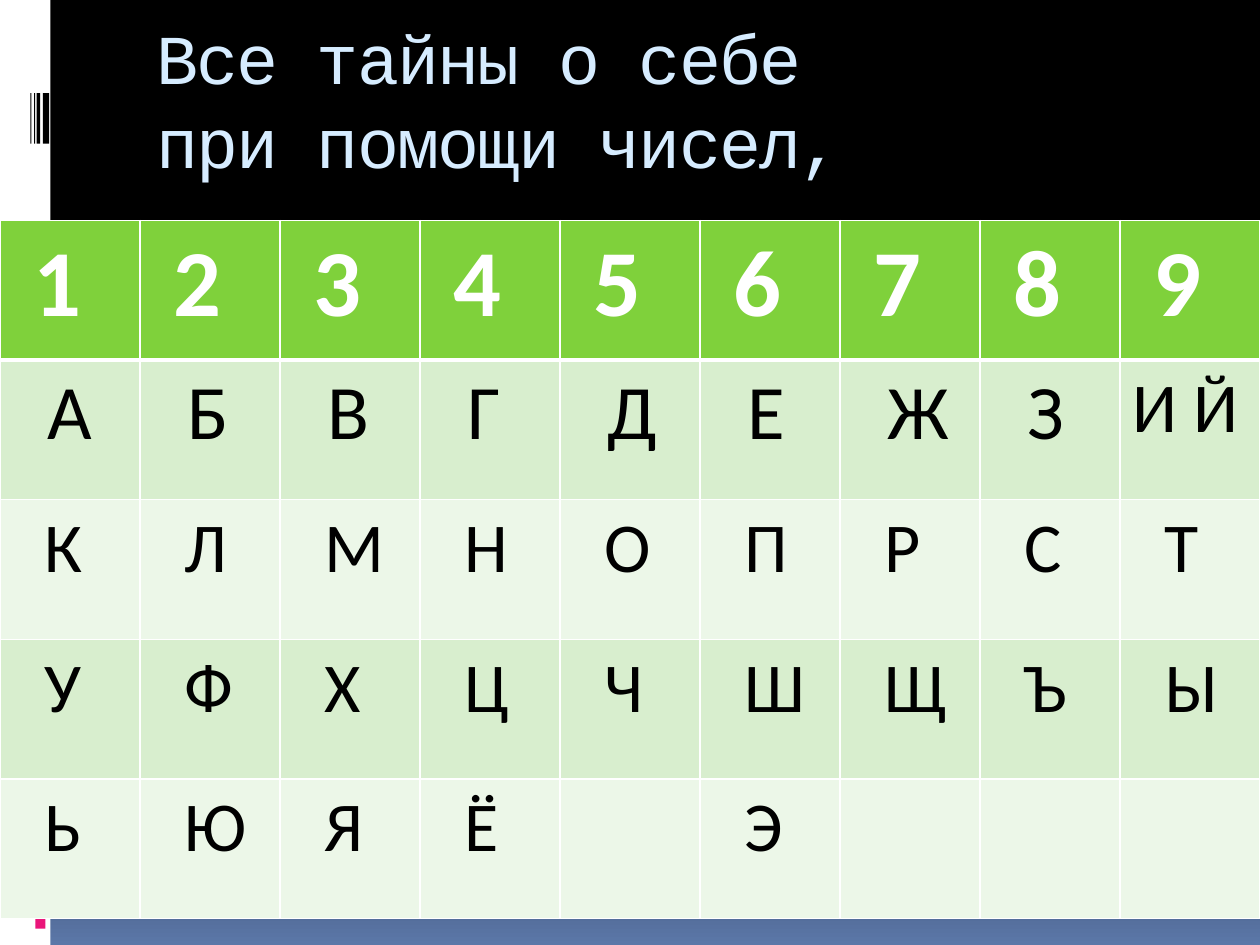
from lxml import etree
from pptx import Presentation
from pptx.dml.color import RGBColor
from pptx.enum.shapes import MSO_SHAPE as Preset
from pptx.enum.text import MSO_ANCHOR as Anchor
from pptx.oxml.ns import qn
from pptx.util import Inches, Pt


def colour(code):
    return RGBColor.from_string(code)


class SlideBuilder:
    title_font, table_font = "Courier New", "Calibri"
    black, white, title_blue, base_blue = "000000", "FFFFFF", "D6ECFF", "5B77A8"
    header_fill, band_fills = "7FD13B", ("D8EECE", "ECF7E8")

    def __init__(self, page):
        self.page = page

    def background(self):
        fill = self.page.background.fill
        fill.gradient()
        fill.gradient_angle = 270
        stops = ((0.65, self.black), (1, self.base_blue))
        for stop, (position, code) in zip(fill.gradient_stops, stops):
            stop.position = position
            stop.color.rgb = colour(code)

    def bar(self, left, top, width, height, code):
        shape = self.page.shapes.add_shape(
            Preset.RECTANGLE, Inches(left), Inches(top), Inches(width), Inches(height))
        shape.shadow.inherit = False
        shape.fill.solid()
        shape.fill.fore_color.rgb = colour(code)
        shape.line.fill.background()

    def title(self, text, left, top, width, height):
        box = self.page.shapes.add_textbox(
            Inches(left), Inches(top), Inches(width), Inches(height))
        frame = box.text_frame
        frame.word_wrap = True
        frame.vertical_anchor = Anchor.MIDDLE
        para = frame.paragraphs[0]
        para.text = text
        para.line_spacing = Pt(48)
        self.style(para, self.title_font, 40, self.title_blue)
        for span in para.runs:
            span.font._element.set("spc", "-100")

    def style(self, para, name, size, code, bold=False):
        font = para.font
        font.name, font.size, font.bold = name, Pt(size), bold
        font.color.rgb = colour(code)

    def borders(self, cell, bottom):
        properties = cell._tc.get_or_add_tcPr()
        widths = {"a:lnL": 1, "a:lnR": 1, "a:lnT": 1, "a:lnB": bottom}
        for index, (tag, width) in enumerate(widths.items()):
            line = etree.Element(qn(tag), w=str(Pt(width)))
            solid = etree.SubElement(line, qn("a:solidFill"))
            etree.SubElement(solid, qn("a:srgbClr"), val=self.white)
            properties.insert(index, line)

    def cell(self, cell, text, size, indent, header, fill):
        cell.fill.solid()
        cell.fill.fore_color.rgb = colour(fill)
        cell.margin_left = Inches(indent)
        para = cell.text_frame.paragraphs[0]
        para.text = text
        self.style(para, self.table_font, size,
                   self.white if header else self.black, bold=header)
        self.borders(cell, 3 if header else 1)

    def table(self, rows, left, top, width, height):
        table = self.page.shapes.add_table(
            len(rows), len(rows[0]), Inches(left), Inches(top),
            Inches(width), Inches(height)).table
        # Text size and left indent of each row
        looks = ((54, 0.27), (44, 0.38)) + ((40, 0.35),) * 3
        for row, (texts, (size, indent)) in enumerate(zip(rows, looks)):
            header = row == 0
            fill = self.header_fill if header else self.band_fills[(row - 1) % 2]
            for column, text in enumerate(texts):
                # A pair of letters needs the full cell width
                look = (40, 0.1) if len(text) > 1 else (size, indent)
                self.cell(table.cell(row, column), text, *look, header, fill)


def main():
    deck = Presentation()
    deck.slide_width, deck.slide_height = Inches(10), Inches(7.5)
    builder = SlideBuilder(deck.slides.add_slide(deck.slide_layouts[6]))
    builder.background()

    # Side strip with coloured marks and a group of thin black bars
    builder.bar(0, 0, 0.4, 7.5, "FFFFFF")
    for top, height, code in ((5.52, 1.85, "EA157A"), (5.25, 0.25, "FEB80A"),
                              (5.07, 0.15, "4E5B6F"), (4.97, 0.08, "EA157A")):
        builder.bar(0.28, top, 0.08, height, code)
    for left, width in ((0.34, 0.05), (0.29, 0.03), (0.27, 0.01), (0.24, 0.01)):
        builder.bar(left, 0.74, width, 0.4, "000000")

    # Title
    builder.title("Все тайны о себе\vпри помощи чисел,", 1.14, 0, 8.36, 1.56)

    # Letters under their numbers
    builder.table([
        list("123456789"),
        [*"АБВГДЕЖЗ", "И Й"],
        list("КЛМНОПРСТ"),
        list("УФХЦЧШЩЪЫ"),
        [*"ЬЮЯЁ", "", "Э", "", "", ""],
    ], 0, 1.75, 10, 5.54)

    deck.save("out.pptx")


if __name__ == "__main__":
    main()
